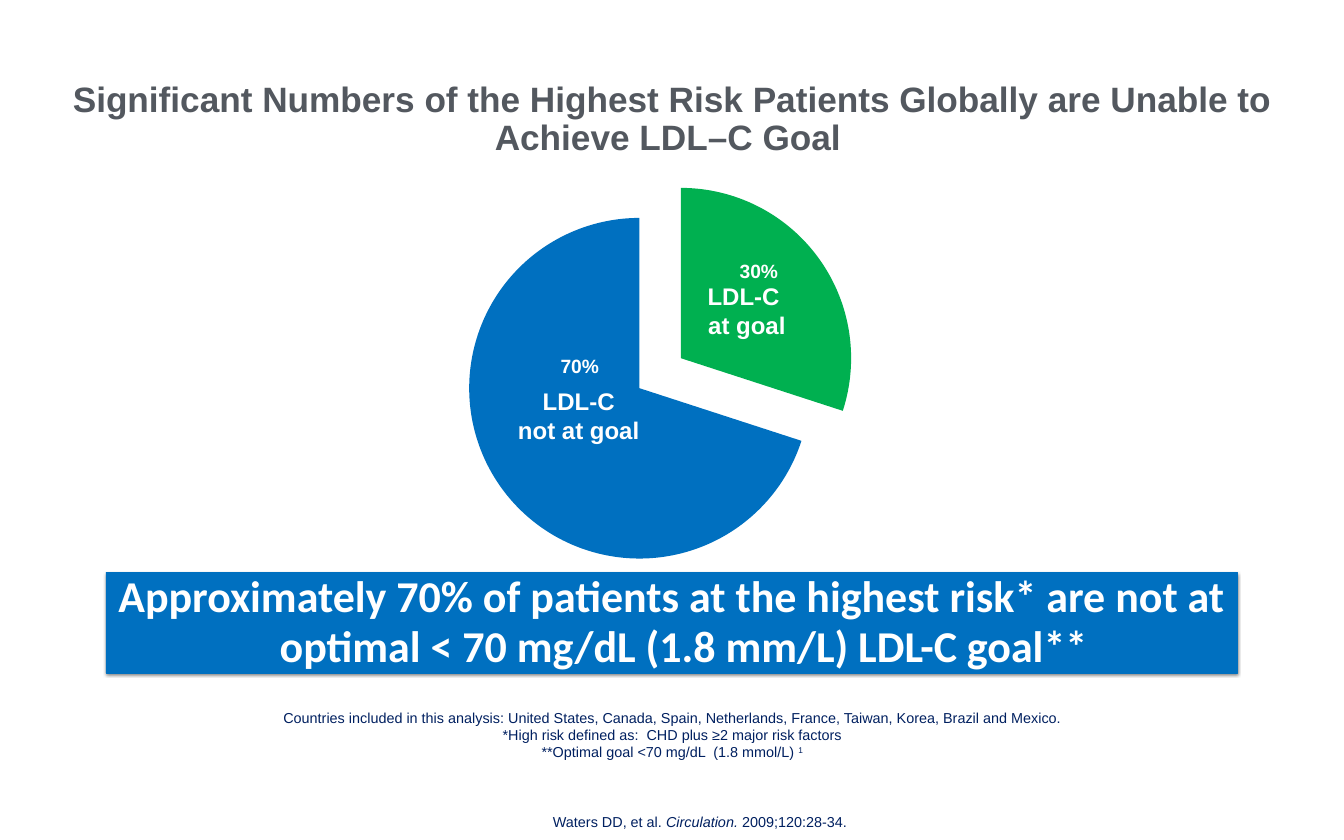
from dataclasses import dataclass

from lxml import etree
from pptx import Presentation, util as u
from pptx.chart.data import CategoryChartData
from pptx.dml.color import RGBColor
from pptx.enum import chart as charts, shapes, text
from pptx.oxml import parse_xml
from pptx.oxml.ns import nsdecls, qn


@dataclass(frozen=True)
class Theme:
    blue: str = "0070C0"
    green: str = "00B050"
    navy: str = "002060"
    grey: str = "53585F"
    white: str = "FFFFFF"
    black: str = "000000"
    body_font: str = "Arial"
    banner_font: str = "Calibri"
    note_size: int = 18
    percent_size: int = 24
    label_size: int = 30
    title_size: int = 44
    banner_size: int = 55


THEME = Theme()
INSETS = (0.22, 0.11, 0.22, 0.11)


def rgb(colour):
    return RGBColor.from_string(colour)


def style_font(font, size, colour, name=THEME.body_font, bold=False):
    font.size, font.name, font.bold = u.Pt(size), name, bold
    font.color.rgb = rgb(colour)


def write(frame, paragraphs, size, colour, name=THEME.body_font, bold=False,
          anchor="TOP", insets=INSETS, line_spacing=None, hanging=0):
    """Fill a frame; a paragraph is a list of texts or (text, "italic"/"super") pairs."""
    frame.word_wrap = True
    frame.auto_size = text.MSO_AUTO_SIZE.NONE
    frame.vertical_anchor = text.MSO_ANCHOR[anchor]
    (frame.margin_left, frame.margin_top,
     frame.margin_right, frame.margin_bottom) = map(u.Inches, insets)
    for index, pieces in enumerate(paragraphs):
        paragraph = frame.add_paragraph() if index else frame.paragraphs[0]
        paragraph.alignment = text.PP_ALIGN.CENTER
        paragraph.space_before = u.Pt(0)
        if line_spacing:
            paragraph.line_spacing = line_spacing
        if hanging:
            properties = paragraph._p.get_or_add_pPr()
            properties.set("marL", str(u.Inches(hanging)))
            properties.set("indent", str(-u.Inches(hanging)))
        for piece in pieces:
            if piece == "\v":
                paragraph.add_line_break()
                continue
            words, effect = (piece, "") if isinstance(piece, str) else piece
            run = paragraph.add_run()
            run.text = words
            style_font(run.font, size, colour, name, bold)
            if effect == "italic":
                run.font.italic = True
            elif effect == "super":
                run._r.get_or_add_rPr().set("baseline", "30000")


class SlideBuilder:
    """Places elements; every box is (left, top, width, height) in % of the slide."""

    def __init__(self, presentation, theme):
        self.theme = theme
        self.size = presentation.slide_width, presentation.slide_height
        self.slide = presentation.slides.add_slide(presentation.slide_layouts[5])

    def place(self, box):
        return [round(share * side / 100) for share, side in zip(box, self.size * 2)]

    def title(self, box, words):
        title = self.slide.shapes.title
        title.left, title.top, title.width, title.height = self.place(box)
        write(title.text_frame, [[words]], self.theme.title_size, self.theme.grey,
              bold=True, anchor="BOTTOM", line_spacing=0.9)

    def text(self, box, paragraphs, **style):
        frame = self.slide.shapes.add_textbox(*self.place(box)).text_frame
        write(frame, paragraphs, **style)

    def banner(self, box, words):
        theme = self.theme
        banner = self.slide.shapes.add_shape(shapes.MSO_SHAPE.RECTANGLE, *self.place(box))
        banner.fill.solid()
        banner.fill.fore_color.rgb = rgb(theme.blue)
        banner.line.color.rgb = rgb(theme.blue)
        banner.line.width = u.Pt(0.75)
        banner.shadow.inherit = False
        effects = banner._element.spPr.find(qn("a:effectLst"))
        effects.append(parse_xml(
            f'<a:outerShdw {nsdecls("a")} blurRad="{u.Pt(4)}" dist="{u.Pt(2)}" dir="5400000">'
            f'<a:srgbClr val="{theme.black}"><a:alpha val="50000"/></a:srgbClr></a:outerShdw>'))
        write(banner.text_frame, [[words]], theme.banner_size, theme.white,
              name=theme.banner_font, bold=True, anchor="MIDDLE",
              insets=(0.2, 0.11, 0.2, 0.11), line_spacing=0.95, hanging=0.42)

    def pie(self, box, values, colours, explosions, label_shifts, plot_layout):
        theme = self.theme
        data = CategoryChartData(number_format='0"%"')
        data.categories = [str(n + 1) for n in range(len(values))]
        data.add_series("Series 1", values)
        chart = self.slide.shapes.add_chart(
            charts.XL_CHART_TYPE.PIE, *self.place(box), data).chart
        chart.has_legend = chart.has_title = False
        style_font(chart.font, theme.note_size, theme.black)
        plot = chart.plots[0]
        plot.vary_by_categories = True
        series = plot.series[0]
        for index, (colour, explosion, shift) in enumerate(
                zip(colours, explosions, label_shifts)):
            point = series.points[index]
            point.format.fill.solid()
            point.format.fill.fore_color.rgb = rgb(colour)
            point.format.line.fill.background()
            label = point.data_label
            style_font(label.font, theme.percent_size, theme.white, bold=True)
            label.position = charts.XL_LABEL_POSITION.CENTER
            slice_xml = series._element.findall(qn("c:dPt"))[index]
            slice_xml.find(qn("c:spPr")).addprevious(self.explosion(explosion))
            label_xml = series._element.findall(".//" + qn("c:dLbl"))[index]
            label_xml.find(qn("c:idx")).addnext(self.layout(x=shift[0], y=shift[1]))
        # The series value reserves room in the plot for the moved slices
        series._element.find(qn("c:dPt")).addprevious(self.explosion(max(explosions)))
        area = chart._chartSpace.chart.plotArea
        for old in area.findall(qn("c:layout")):
            area.remove(old)
        area.insert(0, self.layout(layoutTarget="inner", xMode="edge", yMode="edge",
                                   **plot_layout))

    @staticmethod
    def explosion(percent):
        return etree.Element(qn("c:explosion"), val=str(percent))

    @staticmethod
    def layout(**settings):
        layout = etree.Element(qn("c:layout"))
        manual = etree.SubElement(layout, qn("c:manualLayout"))
        for name, value in settings.items():
            etree.SubElement(manual, qn("c:" + name), val=str(value))
        return layout


def main():
    presentation = Presentation()
    presentation.slide_width, presentation.slide_height = u.Inches(23.33), u.Inches(14.58)
    page = SlideBuilder(presentation, THEME)
    notes = dict(size=THEME.note_size, colour=THEME.navy)
    slice_names = dict(size=THEME.label_size, colour=THEME.white, bold=True)

    # Title
    page.title((2.19, 3.36, 95.76, 16.19),
               "Significant Numbers of the Highest Risk Patients Globally "
               "are Unable to Achieve LDL–C Goal ")

    # Share of patients at goal and not at goal
    page.pie((16.67, 15.23, 68.32, 53.36), values=(30, 70),
             colours=(THEME.green, THEME.blue), explosions=(5, 25),
             label_shifts=((0.01, -0.08), (0.01, -0.16)),
             plot_layout=dict(x=0, y=0.05, w=0.98, h=0.95))
    page.text((47.15, 32.78, 16.85, 8.44), [["LDL-C ", "\v", "at goal"]], **slice_names)
    page.text((35.02, 45.27, 16.07, 8.44), [["LDL-C"], ["not at goal"]], **slice_names)

    # Key message
    page.banner((7.88, 68.11, 84.18, 12),
                "Approximately 70% of patients at the highest risk* are not at "
                "optimal < 70 mg/dL (1.8 mm/L) LDL-C goal**")

    # Footnotes and reference
    page.text((4.07, 83.61, 91.9, 7.75), [
        ["Countries included in this analysis: United States, Canada, Spain, Netherlands, "
         "France, Taiwan, Korea, Brazil and Mexico."],
        ["*High risk defined as:  CHD plus ≥2 major risk factors"],
        ["**Optimal goal <70 mg/dL  (1.8 mmol/L) ", ("1", "super")]], **notes)
    page.text((4.16, 94.92, 95.84, 3.98),
              [["Waters DD, et al. ", ("Circulation.", "italic"), " 2009;120:28-34."]],
              anchor="BOTTOM", insets=(0, 0, 0, 0), **notes)

    presentation.save("out.pptx")


if __name__ == "__main__":
    main()
